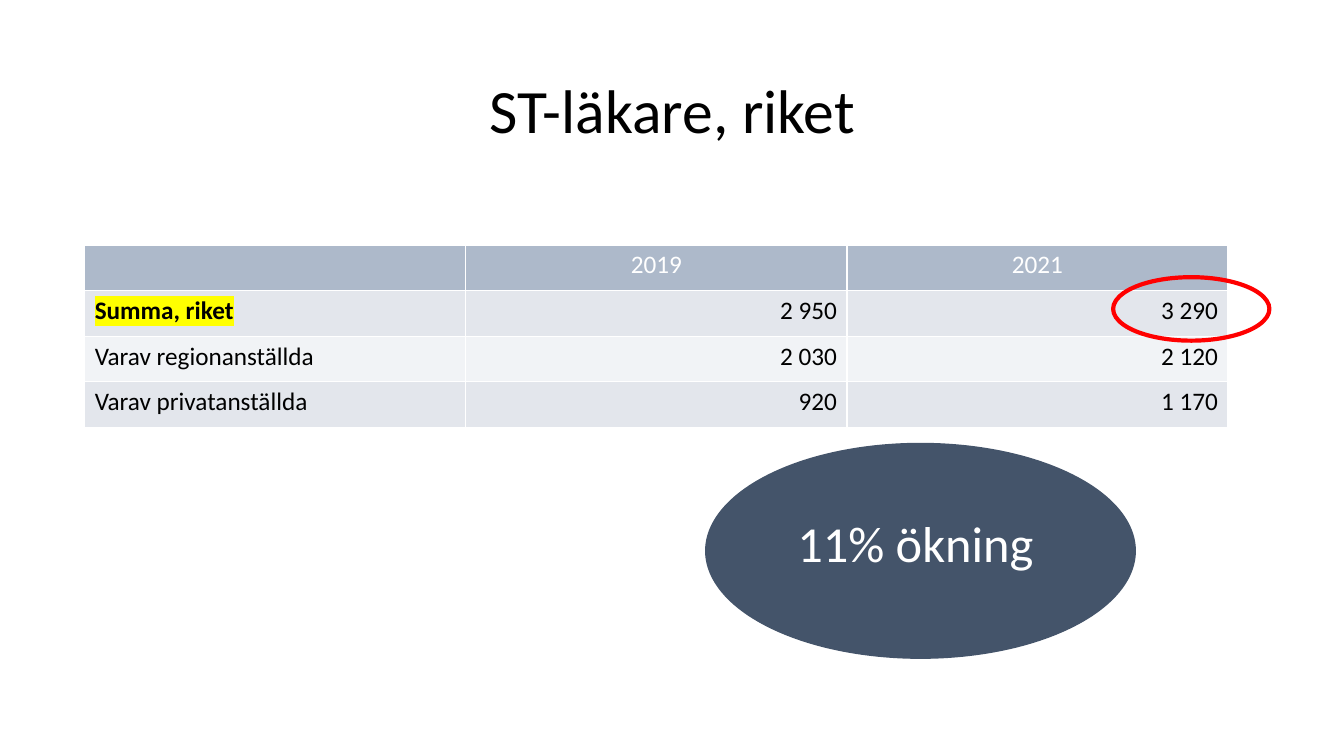
from lxml import etree
from pptx import Presentation
from pptx.dml.color import RGBColor
from pptx.enum.shapes import MSO_SHAPE
from pptx.enum.text import MSO_ANCHOR, MSO_AUTO_SIZE, PP_ALIGN
from pptx.oxml import parse_xml
from pptx.oxml.ns import nsdecls, qn
from pptx.util import Inches, Pt

OVAL = MSO_SHAPE.OVAL
MIDDLE = MSO_ANCHOR.MIDDLE
GROW = MSO_AUTO_SIZE.SHAPE_TO_FIT_TEXT
LEFT, CENTER, RIGHT = PP_ALIGN.LEFT, PP_ALIGN.CENTER, PP_ALIGN.RIGHT
TITLE_ONLY = 5

COLORS = {
    "black": "000000",
    "white": "FFFFFF",
    "header": "ADB9CA",
    "odd row": "E3E6EC",
    "even row": "F1F3F6",
    "slate": "44546A",
    "red": "FF0000",
    "marker": "FFFF00",
}


def color(name):
    return RGBColor.from_string(COLORS[name])


def add_text(para, text, size, color_name, align=LEFT, bold=False):
    para.alignment = align
    span = para.add_run()
    span.text = text
    span.font.name = "Calibri"
    span.font.size = Pt(size)
    span.font.bold = bold
    span.font.color.rgb = color(color_name)
    return span


deck = Presentation()
deck.slide_width = Inches(13.33)
deck.slide_height = Inches(7.5)
page = deck.slides.add_slide(deck.slide_layouts[TITLE_ONLY])

title = page.shapes.title
title.left, title.top = Inches(0.92), Inches(0.4)
title.width, title.height = Inches(11.5), Inches(1.45)
title.text_frame.vertical_anchor = MIDDLE
title_para = title.text_frame.paragraphs[0]
title_para.line_spacing = 0.9
add_text(title_para, "ST-läkare, riket", 44, "black", CENTER)

ROWS = [
    ["", "2019", "2021"],
    ["Summa, riket", "2 950", "3 290"],
    ["Varav regionanställda", "2 030", "2 120"],
    ["Varav privatanställda", "920", "1 170"],
]
table = page.shapes.add_table(
    len(ROWS), len(ROWS[0]), Inches(0.84), Inches(2.43), Inches(11.34), Inches(1.81)
).table
for row_index, values in enumerate(ROWS):
    is_header = row_index == 0
    fill_name = "header" if is_header else "odd row" if row_index % 2 else "even row"
    for column_index, value in enumerate(values):
        cell = table.cell(row_index, column_index)
        properties = cell._tc.get_or_add_tcPr()
        for side in ("lnL", "lnR", "lnT", "lnB"):
            properties.append(parse_xml(
                f'<a:{side} {nsdecls("a")} w="12700"><a:solidFill>'
                f'<a:srgbClr val="{COLORS["white"]}"/></a:solidFill></a:{side}>'
            ))
        cell.fill.solid()
        cell.fill.fore_color.rgb = color(fill_name)
        para = cell.text_frame.paragraphs[0]
        if not value:
            para.font.size = Pt(18)
            continue
        is_total = row_index == 1 and column_index == 0
        align = CENTER if is_header else RIGHT if column_index else LEFT
        span = add_text(para, value, 18, "white" if is_header else "black", align, is_total)
        if is_total:
            highlight = etree.Element(qn("a:highlight"))
            etree.SubElement(highlight, qn("a:srgbClr"), val=COLORS["marker"])
            span.font._element.find(qn("a:solidFill")).addnext(highlight)

increase = page.shapes.add_shape(OVAL, Inches(7), Inches(4.4), Inches(4.26), Inches(2.13))
increase.shadow.inherit = False
increase.fill.solid()
increase.fill.fore_color.rgb = color("slate")
increase.line.color.rgb = color("slate")
increase.line.width = Pt(1)

label = page.shapes.add_textbox(Inches(7.81), Inches(5.03), Inches(2.57), Inches(0.71))
label.text_frame.word_wrap = True
label.text_frame.auto_size = GROW
add_text(label.text_frame.paragraphs[0], "11% ökning", 36, "white")

ring = page.shapes.add_shape(OVAL, Inches(11.04), Inches(2.75), Inches(1.55), Inches(0.63))
ring.shadow.inherit = False
ring.fill.background()
ring.line.color.rgb = color("red")
ring.line.width = Pt(3)

deck.save("out.pptx")
